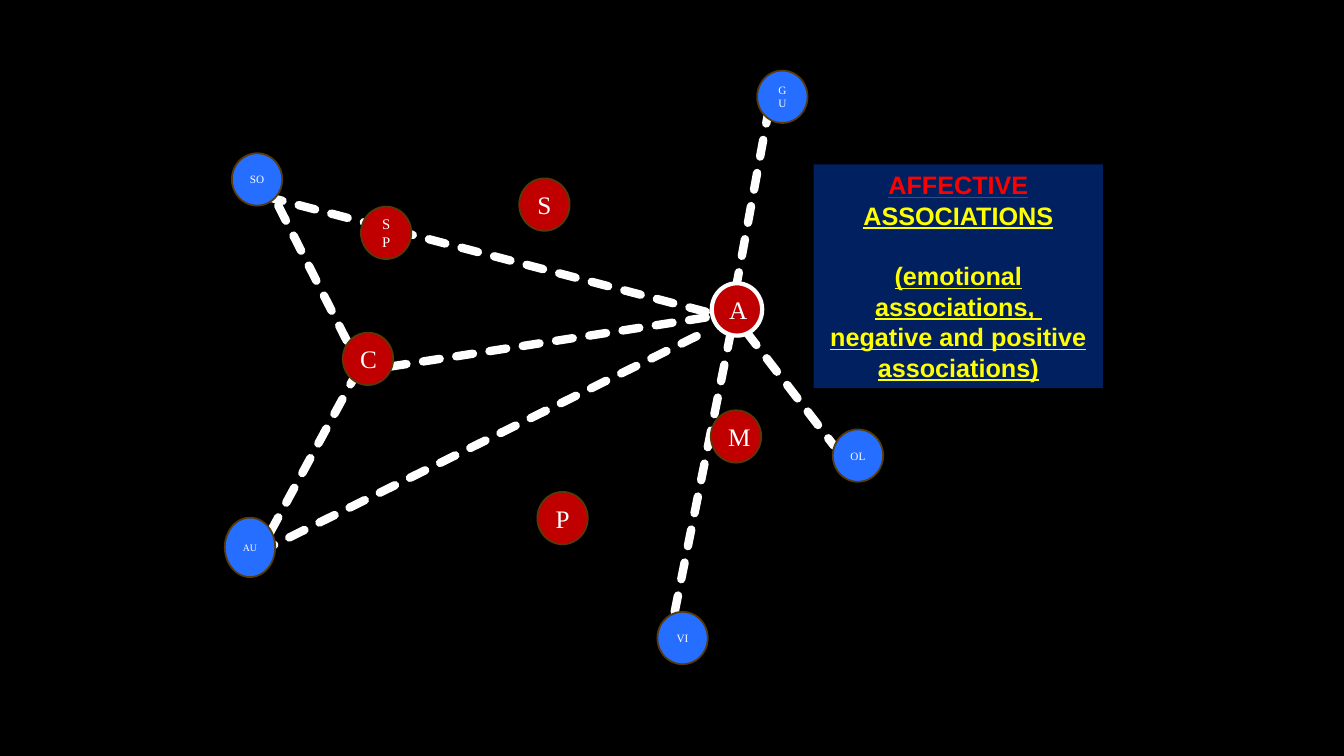
from lxml.etree import SubElement
from pptx import Presentation
from pptx.dml.color import RGBColor
from pptx.enum.dml import MSO_LINE
from pptx.enum.shapes import MSO_CONNECTOR, MSO_SHAPE
from pptx.enum.text import MSO_ANCHOR, PP_ALIGN
from pptx.oxml.ns import qn
from pptx.util import Inches, Pt

BLACK = RGBColor(0x00, 0x00, 0x00)
WHITE = RGBColor(0xFF, 0xFF, 0xFF)
NAVY = RGBColor(0x00, 0x20, 0x60)
RED = RGBColor(0xFF, 0x00, 0x00)
YELLOW = RGBColor(0xFF, 0xFF, 0x00)
CRIMSON = RGBColor(0xC0, 0x00, 0x00)
BLUE = RGBColor(0x25, 0x6E, 0xFF)
BROWN = RGBColor(0x59, 0x39, 0x06)

NODE_WIDTH, NODE_HEIGHT = 0.5, 0.52
LINE_PITCH = Pt(21.7)

# Start and end of each association, in inches
LINKS = [
    ((2.57, 5.48), (7.00, 3.29)),  # AU to A
    ((2.64, 1.95), (7.18, 3.14)),  # SO to A
    ((7.63, 1.06), (7.22, 3.29)),  # GU to A
    ((7.25, 3.29), (6.67, 6.18)),  # A to VI
    ((7.40, 3.29), (8.27, 4.42)),  # A to OL
    ((7.00, 3.15), (3.85, 3.64)),  # A to C
    ((2.68, 5.28), (3.57, 3.64)),  # AU to C
    ((2.76, 2.04), (3.45, 3.40)),  # SO to C
]

# Label, centre x, centre y, text size
CENTRAL_NODES = [
    ("S", 5.4, 2.03, 18),
    ("P", 5.58, 5.14, 18),
    ("A", 7.31, 3.07, 18),
    ("M", 7.3, 4.33, 18),
    ("C", 3.65, 3.56, 18),
    ("SP", 3.83, 2.31, 10.5),
]
SENSORY_NODES = [
    ("OL", 8.51, 4.52, 8),
    ("VI", 6.77, 6.33, 8),
    ("GU", 7.76, 0.96, 8),
    ("SO", 2.55, 1.78, 8),
    ("AU", 2.48, 5.43, 7),
]


def add_link(slide, start, end):
    points = [Inches(value) for value in start + end]
    link = slide.shapes.add_connector(MSO_CONNECTOR.STRAIGHT, *points)
    link.line.color.rgb = WHITE
    link.line.width = Pt(6)
    link.line.dash_style = MSO_LINE.SQUARE_DOT
    properties = link._element.spPr
    properties.find(qn("a:ln")).set("cap", "rnd")
    SubElement(properties, qn("a:effectLst"))


def add_filled_shape(slide, preset, left, top, width, height, fill):
    lengths = [Inches(value) for value in (left, top, width, height)]
    shape = slide.shapes.add_shape(preset, *lengths)
    shape.shadow.inherit = False
    shape.fill.solid()
    shape.fill.fore_color.rgb = fill
    shape.text_frame.word_wrap = True
    return shape


def format_run(run, font_name, size, color):
    run.font.name = font_name
    run.font.size = Pt(size)
    run.font.color.rgb = color


def add_node(slide, label, x, y, size, fill):
    height = 0.59 if label == "AU" else NODE_HEIGHT
    node = add_filled_shape(slide, MSO_SHAPE.OVAL, x - NODE_WIDTH / 2,
                            y - height / 2, NODE_WIDTH, height, fill)
    is_hub = label == "A"
    node.line.color.rgb = WHITE if is_hub else BROWN
    node.line.width = Pt(3 if is_hub else 1.25)
    node.text_frame.vertical_anchor = MSO_ANCHOR.MIDDLE
    paragraph = node.text_frame.paragraphs[0]
    paragraph.text = label
    paragraph.alignment = PP_ALIGN.CENTER
    format_run(paragraph.runs[0], "Times New Roman", size, WHITE)


def add_caption(slide):
    caption = add_filled_shape(slide, MSO_SHAPE.RECTANGLE,
                               8.07, 1.63, 2.87, 2.22, NAVY)
    caption.line.fill.background()
    frame = caption.text_frame
    frame.vertical_anchor = MSO_ANCHOR.TOP
    heading, explanation = frame.paragraphs[0], frame.add_paragraph()
    heading.text = "AFFECTIVE "
    heading.add_run().text = "ASSOCIATIONS"
    explanation.text = ("(emotional associations,  "
                        "negative and positive associations)")
    explanation.space_before = LINE_PITCH
    for paragraph in frame.paragraphs:
        paragraph.alignment = PP_ALIGN.CENTER
        paragraph.line_spacing = LINE_PITCH
        for run in paragraph.runs:
            format_run(run, "Arial", 18, YELLOW)
            run.font.bold = True
            run.font.underline = True
    heading.runs[0].font.color.rgb = RED


def main():
    presentation = Presentation()
    presentation.slide_width = Inches(13.33)
    presentation.slide_height = Inches(7.5)
    slide = presentation.slides.add_slide(presentation.slide_layouts[6])
    slide.background.fill.solid()
    slide.background.fill.fore_color.rgb = BLACK

    add_caption(slide)
    for start, end in LINKS:
        add_link(slide, start, end)
    for nodes, fill in ((CENTRAL_NODES, CRIMSON), (SENSORY_NODES, BLUE)):
        for label, x, y, size in nodes:
            add_node(slide, label, x, y, size, fill)

    presentation.save("out.pptx")


if __name__ == "__main__":
    main()
